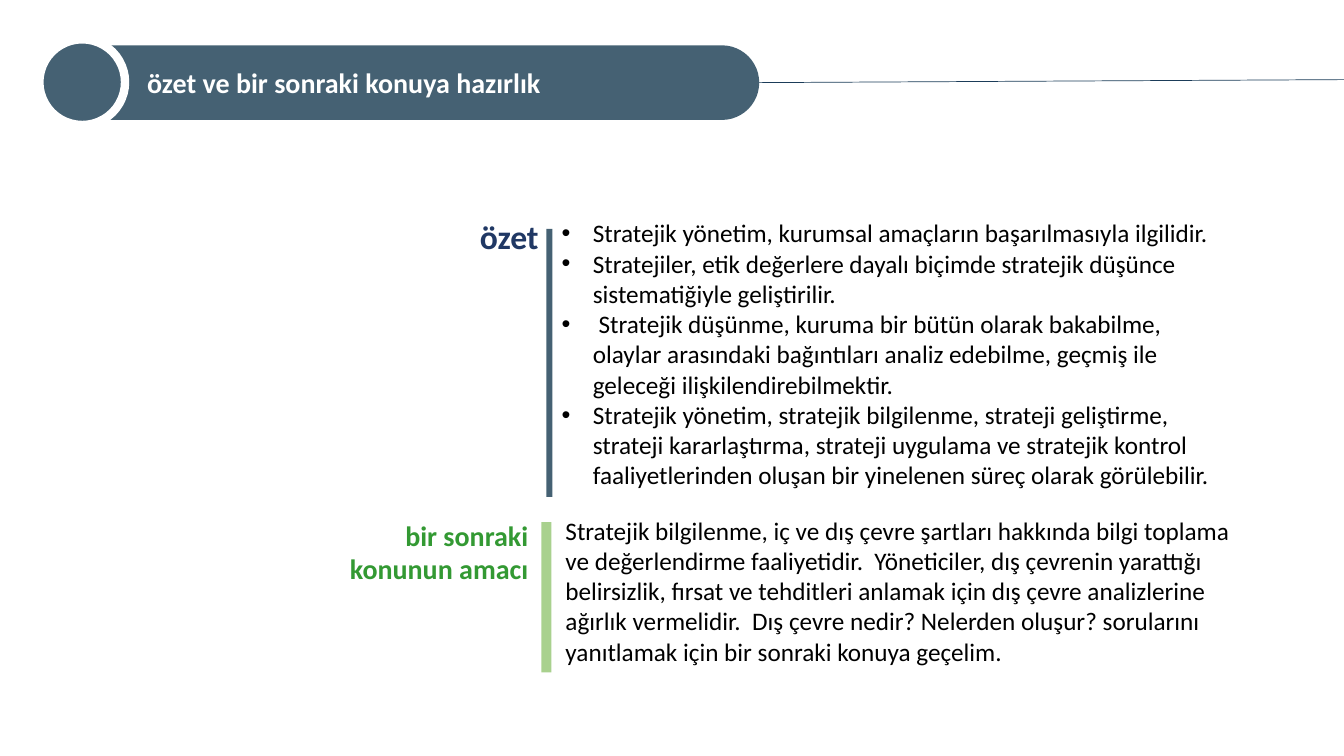
from lxml import etree
from pptx import Presentation
from pptx.dml.color import RGBColor
from pptx.enum.shapes import MSO_CONNECTOR, MSO_SHAPE
from pptx.enum.text import MSO_ANCHOR, MSO_AUTO_SIZE, PP_ALIGN
from pptx.oxml.ns import qn
from pptx.util import Inches, Pt

LEFT, RIGHT = PP_ALIGN.LEFT, PP_ALIGN.RIGHT
TOP, MIDDLE = MSO_ANCHOR.TOP, MSO_ANCHOR.MIDDLE
FIXED = MSO_AUTO_SIZE.NONE
RECT, OVAL, PILL = MSO_SHAPE.RECTANGLE, MSO_SHAPE.OVAL, MSO_SHAPE.ROUNDED_RECTANGLE
STRAIGHT = MSO_CONNECTOR.STRAIGHT

COLORS = {
    "slate": "456173",
    "white": "FFFFFF",
    "black": "000000",
    "navy": "203864",
    "green": "339933",
    "light": "A9D18E",
    "rule": "1B3C59",
}

TITLE = "özet ve bir sonraki konuya hazırlık"
POINTS = [
    "Stratejik yönetim, kurumsal amaçların başarılmasıyla ilgilidir.",
    "Stratejiler, etik değerlere dayalı biçimde stratejik düşünce "
    "sistematiğiyle geliştirilir.",
    " Stratejik düşünme, kuruma bir bütün olarak bakabilme, olaylar arasındaki "
    "bağıntıları analiz edebilme, geçmiş ile geleceği ilişkilendirebilmektir.",
    "Stratejik yönetim, stratejik bilgilenme, strateji geliştirme, strateji "
    "kararlaştırma, strateji uygulama ve stratejik kontrol faaliyetlerinden "
    "oluşan bir yinelenen süreç olarak görülebilir.",
]
NEXT = (
    "Stratejik bilgilenme, iç ve dış çevre şartları hakkında bilgi toplama ve "
    "değerlendirme faaliyetidir.  Yöneticiler, dış çevrenin yarattığı "
    "belirsizlik, fırsat ve tehditleri anlamak için dış çevre analizlerine "
    "ağırlık vermelidir.  Dış çevre nedir? Nelerden oluşur? sorularını "
    "yanıtlamak için bir sonraki konuya geçelim."
)


def color(name):
    return RGBColor.from_string(COLORS[name])


def assign(target, values):
    for key, value in values.items():
        setattr(target, key, value)


def place(shape, box):
    names = ("left", "top", "width", "height")
    assign(shape, dict(zip(names, map(Inches, box))))


def write(shape, lines, size, ink, bold=False, align=LEFT, anchor=TOP):
    frame = shape.text_frame
    frame.text = "\n".join(lines)
    assign(frame, {"word_wrap": True, "auto_size": FIXED, "vertical_anchor": anchor})
    for para in frame.paragraphs:
        assign(para, {"alignment": align, "space_before": Pt(0)})
        for run in para.runs:
            assign(run.font, {"name": "Calibri", "size": Pt(size), "bold": bold})
            run.font.color.rgb = color(ink)


def add_text(slide, box, text, *style, **more):
    shape = slide.shapes.add_textbox(*map(Inches, box))
    write(shape, [text], *style, **more)


def add_block(slide, kind, box, fill, edge=None):
    shape = slide.shapes.add_shape(kind, *map(Inches, box))
    shape.shadow.inherit = False
    shape.fill.solid()
    shape.fill.fore_color.rgb = color(fill)
    if edge:
        shape.line.color.rgb = color(edge)
        shape.line.width = Pt(6)
    else:
        shape.line.fill.background()
    return shape


def add_rule(slide, start, end):
    rule = slide.shapes.add_connector(STRAIGHT, *map(Inches, start + end))
    rule.line.color.rgb = color("rule")
    rule.line.width = Pt(0.5)
    etree.SubElement(rule.element.spPr, qn("a:effectLst"))


def add_header(slide):
    pill = add_block(slide, PILL, (0.68, 0.45, 6.85, 0.74), "slate")
    pill.adjustments[0] = 0.5
    add_block(slide, OVAL, (0.39, 0.39, 0.85, 0.85), "slate", "white")
    add_rule(slide, (7.53, 0.82), (13.33, 0.79))
    title = slide.shapes.title
    place(title, (1.36, 0.45, 6, 0.74))
    write(title, [TITLE], 20, "white", bold=True, anchor=MIDDLE)
    pill.element.getparent().append(title.element)


def add_points(slide):
    body = slide.placeholders[1]
    place(body, (5.47, 2.11, 6.76, 2.83))
    write(body, POINTS, 18, "black")
    indent = {"marL": Inches(0.31), "indent": -Inches(0.31)}
    for para in body.text_frame.paragraphs:
        props = para._p.get_or_add_pPr()
        for key, value in indent.items():
            props.set(key, str(value))
        etree.SubElement(props, qn("a:buFont"), typeface="Arial")
        etree.SubElement(props, qn("a:buChar"), char="•")


def main():
    deck = Presentation()
    assign(deck, {"slide_width": Inches(13.33), "slide_height": Inches(7.5)})
    slide = deck.slides.add_slide(deck.slide_layouts[1])
    add_points(slide)
    add_header(slide)
    add_block(slide, RECT, (5.42, 2.27, 0.06, 2.66), "slate")
    add_block(slide, RECT, (5.37, 5.18, 0.1, 1.49), "light")
    label = {"bold": True, "align": RIGHT}
    add_text(slide, (4.39, 2.09, 1.05, 0.5), "özet", 24, "navy", **label)
    add_text(slide, (3.34, 5.09, 2, 0.77), "bir sonraki konunun amacı", 20, "green", **label)
    add_text(slide, (5.51, 5.06, 6.98, 1.62), NEXT, 18, "black")
    deck.save("out.pptx")


if __name__ == "__main__":
    main()
